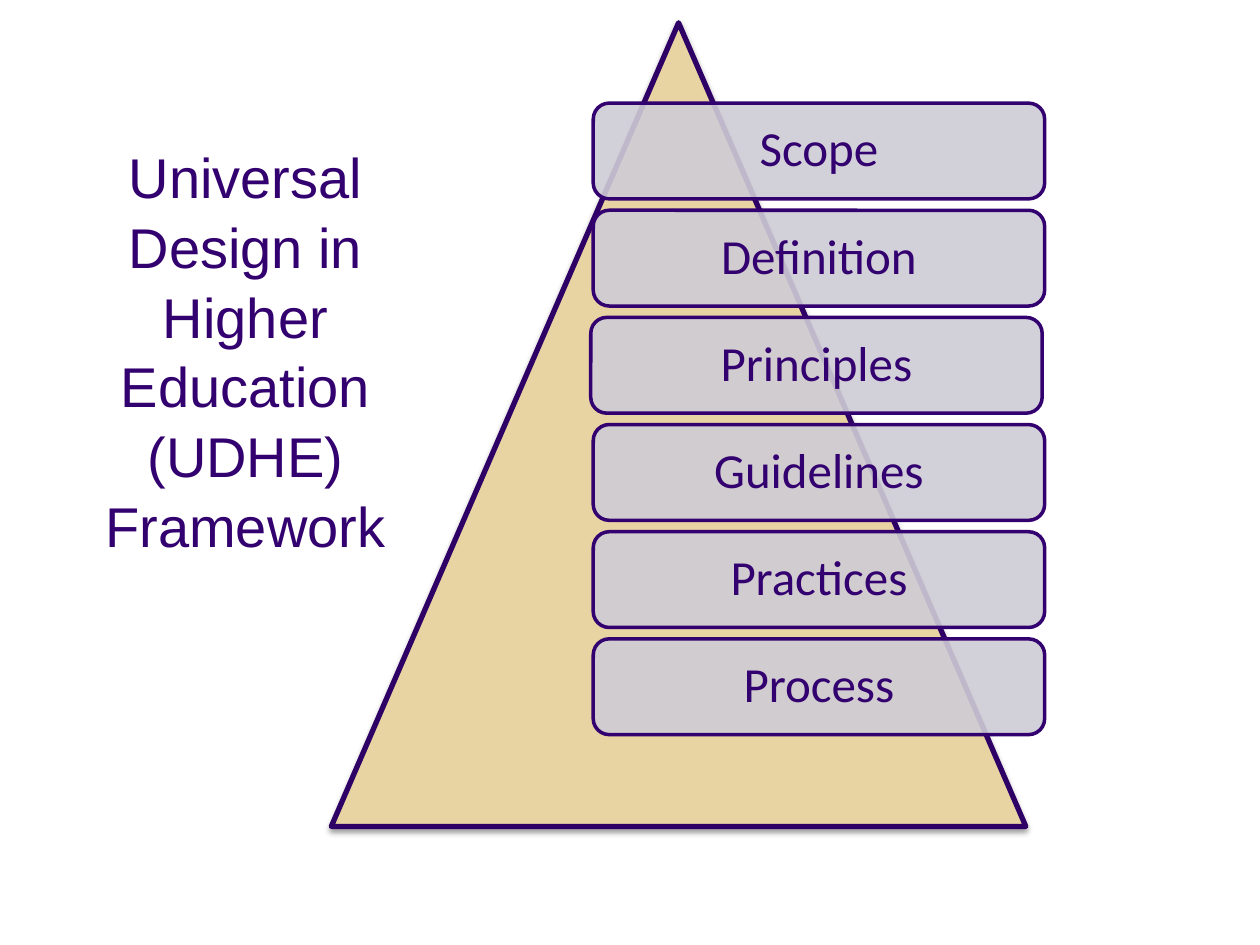
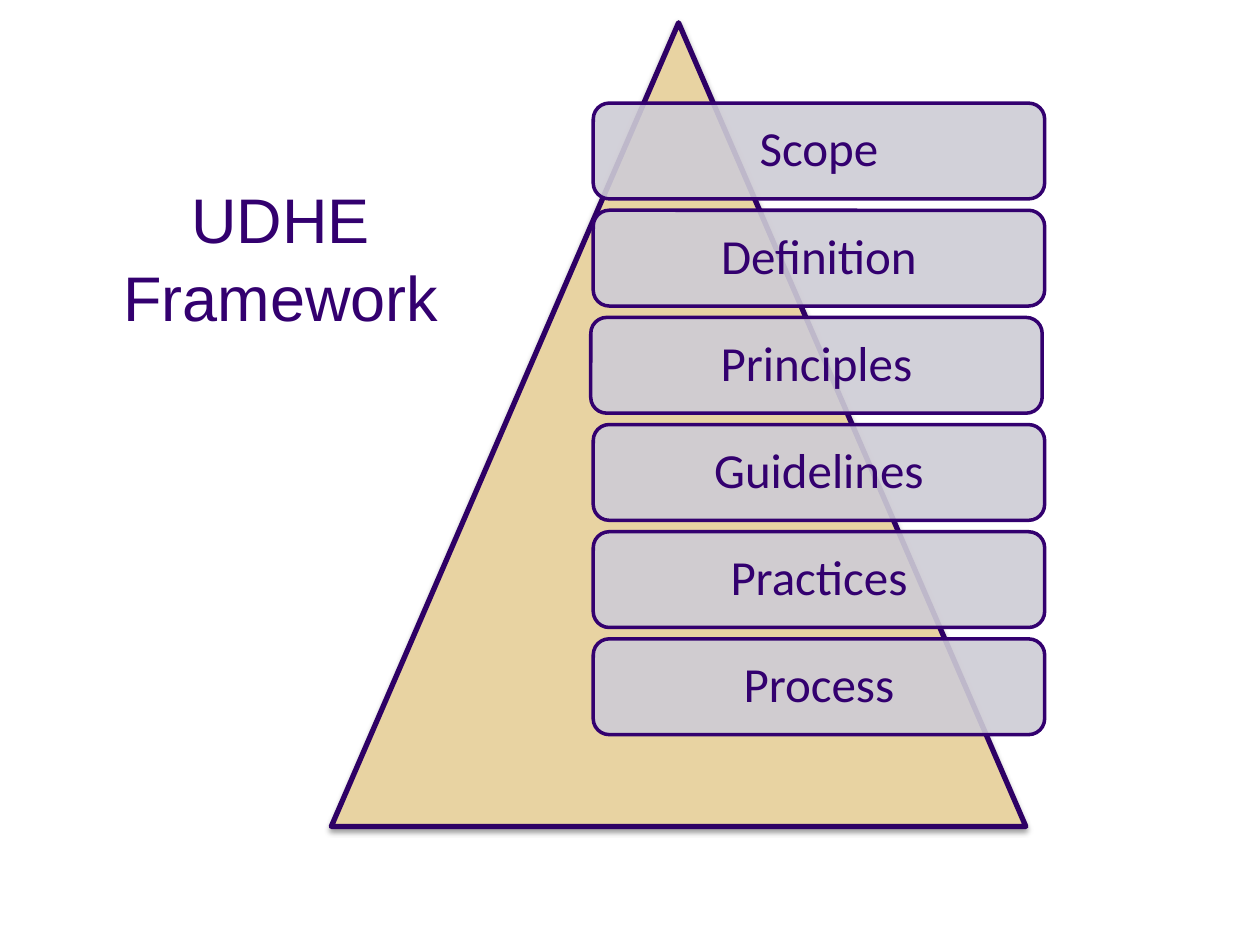
from dataclasses import dataclass

from lxml import etree
from pptx import Presentation
from pptx.dml.color import RGBColor
from pptx.enum.shapes import MSO_SHAPE
from pptx.enum.text import MSO_ANCHOR, PP_ALIGN
from pptx.oxml.ns import qn
from pptx.util import Cm, Pt

TRIANGLE = MSO_SHAPE.ISOSCELES_TRIANGLE
ROUND_RECT = MSO_SHAPE.ROUNDED_RECTANGLE
CENTER = PP_ALIGN.CENTER
TOP, MIDDLE = MSO_ANCHOR.TOP, MSO_ANCHOR.MIDDLE


@dataclass(frozen=True)
class Theme:
    purple: str = "33006F"
    dark_purple: str = "2E0065"
    gold: str = "E8D3A2"
    lilac: str = "CECCD5"
    lilac_opacity: int = 90
    shadow: str = "000000"
    shadow_opacity: int = 38
    title_font: str = "Arial"
    level_font: str = "Calibri"
    level_size: int = 28


THEME = Theme()

# Boxes are left, top, width, height in centimetres.
TRIANGLE_BOX = (6.68, 0.46, 14, 16.2)
LEVELS_BOX = (11.96, 2.08, 9.1, 12.73)
LEVEL_HEIGHT = 1.93
LEVELS = ["Scope", "Definition", "Principles", "Guidelines", "Practices", "Process"]
LEVEL_SHIFT = {"Principles": -0.05}

TITLES = [
    (["Universal Design in Higher Education (UDHE) Framework"], 32,
     (1.52, 2.69, 6.86, 3.68)),
    (["UDHE", "Framework"], 36, (1, 3.45, 9.32, 3.68)),
]


def set_alpha(color, percent):
    """Make an a:srgbClr element partly transparent."""
    etree.SubElement(color, qn("a:alpha"), val=str(percent * 1000))


def add_shadow(shape):
    effects = etree.SubElement(shape.element.spPr, qn("a:effectLst"))
    shadow = etree.SubElement(
        effects, qn("a:outerShdw"), blurRad=str(Pt(3.1)), dist=str(Pt(1.6)),
        dir="5400000", rotWithShape="0")
    color = etree.SubElement(shadow, qn("a:srgbClr"), val=THEME.shadow)
    set_alpha(color, THEME.shadow_opacity)


def add_filled(shapes, kind, box, fill, line, width):
    shape = shapes.add_shape(kind, *map(Cm, box))
    shape.fill.solid()
    shape.fill.fore_color.rgb = RGBColor.from_string(fill)
    shape.line.color.rgb = RGBColor.from_string(line)
    shape.line.width = Pt(width)
    return shape


def write(tf, lines, font, size, spacing, anchor):
    tf.word_wrap = True
    tf.vertical_anchor = anchor
    for i, text in enumerate(lines):
        p = tf.add_paragraph() if i else tf.paragraphs[0]
        p.alignment = CENTER
        p.line_spacing = spacing
        r = p.add_run()
        r.text = text
        r.font.name = font
        r.font.size = Pt(size)
        r.font.color.rgb = RGBColor.from_string(THEME.purple)


def add_level(shapes, text, box):
    level = add_filled(shapes, ROUND_RECT, box, THEME.lilac, THEME.purple, 2)
    level.shadow.inherit = False
    color = level.element.spPr.find(qn("a:solidFill")).find(qn("a:srgbClr"))
    set_alpha(color, THEME.lilac_opacity)
    tf = level.text_frame
    tf.margin_left = tf.margin_right = tf.margin_top = tf.margin_bottom = Cm(0.3)
    write(tf, [text], THEME.level_font, THEME.level_size, 0.9, MIDDLE)


def add_levels(shapes, box):
    """Spread the levels evenly from the top to the bottom of the box."""
    left, top, width, height = box
    pitch = (height - LEVEL_HEIGHT) / (len(LEVELS) - 1)
    for i, text in enumerate(LEVELS):
        x = left + LEVEL_SHIFT.get(text, 0)
        add_level(shapes, text, (x, top + i * pitch, width, LEVEL_HEIGHT))


def add_pyramid(s):
    shapes = s.shapes.add_group_shape().shapes
    triangle = add_filled(shapes, TRIANGLE, TRIANGLE_BOX,
                          THEME.gold, THEME.dark_purple, 3)
    add_shadow(triangle)
    add_levels(shapes, LEVELS_BOX)


def add_title(s, lines, size, box):
    tf = s.shapes.add_textbox(*map(Cm, box)).text_frame
    write(tf, lines, THEME.title_font, size, 1.04, TOP)


def add_framework_slide(prs, lines, size, title_box):
    s = prs.slides.add_slide(prs.slide_layouts[6])
    add_pyramid(s)
    add_title(s, lines, size, title_box)


def main():
    prs = Presentation()
    prs.slide_width, prs.slide_height = Cm(25.4), Cm(19.05)
    for lines, size, title_box in TITLES:
        add_framework_slide(prs, lines, size, title_box)
    prs.save("out.pptx")


if __name__ == "__main__":
    main()
